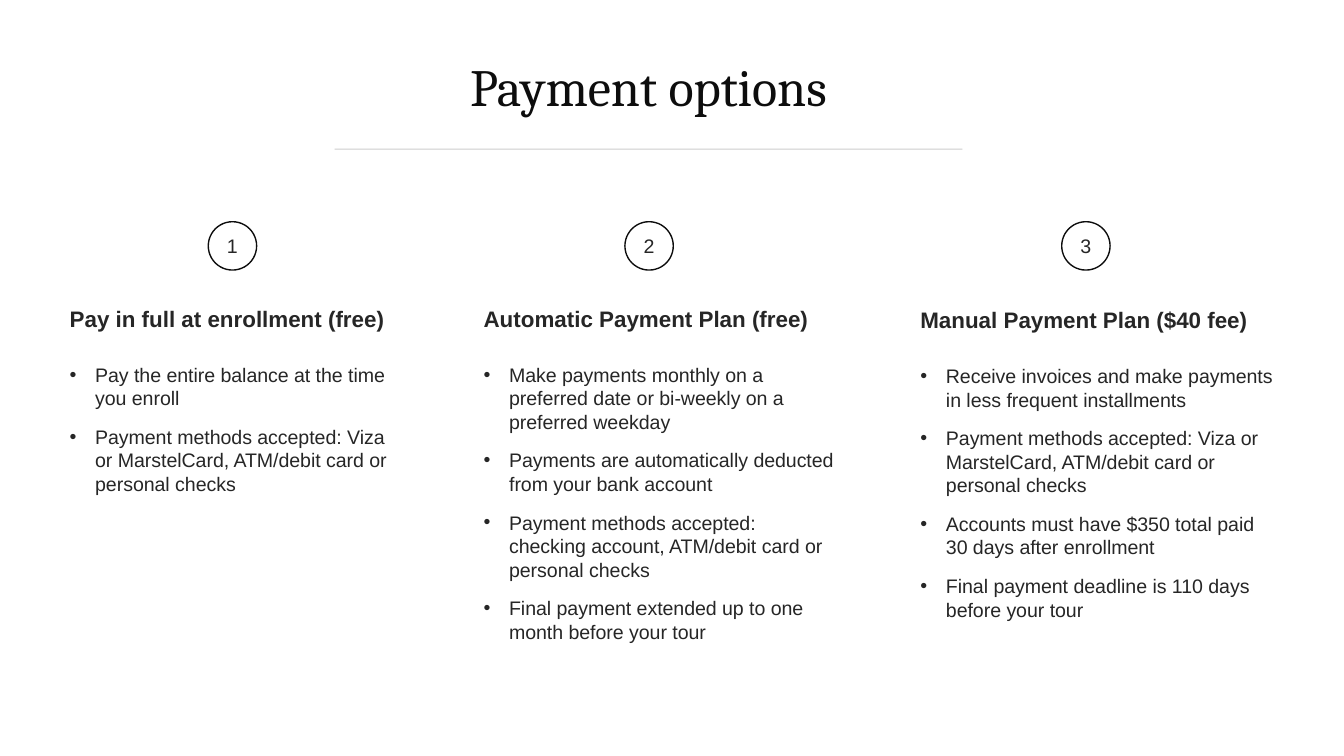
from lxml import etree
from pptx import Presentation
from pptx import util as u
from pptx.dml.color import RGBColor
from pptx.enum import shapes, text
from pptx.oxml.ns import qn

PX = 9144  # 100 px to the inch
INK = RGBColor(0x0D, 0x0D, 0x0D)
BODY = RGBColor(0x26, 0x26, 0x26)
RULE = RGBColor(0x80, 0x80, 0x80)

# left, top, heading width, list width, list height, circle left, heading, items
OPTIONS = [
    (42, 222, 261, 267, 110, 155, "Pay in full at enrollment (free)", [
        "Pay the entire balance at the time you enroll",
        "Payment methods accepted: Viza or MarstelCard, ATM/debit card or personal checks",
    ]),
    (350, 222, 265, 283, 252, 465, "Automatic Payment Plan (free)", [
        "Make payments monthly on a preferred date or bi-weekly on a preferred weekday",
        "Payments are automatically deducted from your bank account",
        "Payment methods accepted: checking account, ATM/debit card or personal checks",
        "Final payment extended up to one month before your tour",
    ]),
    (675, 223, 267, 285, 235, 790, "Manual Payment Plan ($40 fee)", [
        "Receive invoices and make payments in less frequent installments",
        "Payment methods accepted: Viza or MarstelCard, ATM/debit card or personal checks",
        "Accounts must have $350 total paid 30 days after enrollment",
        "Final payment deadline is 110 days before your tour",
    ]),
]


def emu(*lengths):
    return [u.Emu(n * PX) for n in lengths]


def style(p, size, color, name="Arial", bold=False):
    for r in p.runs:
        r.font.size, r.font.name, r.font.bold = u.Pt(size), name, bold
        r.font.color.rgb = color


def add_bullet(p):
    pPr = p._p.get_or_add_pPr()
    pPr.set("marL", str(19 * PX))
    pPr.set("indent", str(-19 * PX))
    etree.SubElement(pPr, qn("a:buFont")).set("typeface", "Arial")
    etree.SubElement(pPr, qn("a:buChar")).set("char", "•")


def add_text(s, box, lines, size, bold=False, bullets=False):
    tf = s.shapes.add_textbox(*emu(*box)).text_frame
    tf.word_wrap = True
    tf.text = "\n".join(lines)
    for i, p in enumerate(tf.paragraphs):
        if bullets:
            add_bullet(p)
        p.space_before = u.Pt(size * 0.2 if i else 0)
        p.space_after = u.Pt(6)
        style(p, size, BODY, bold=bold)


def add_number(s, left, top, number):
    sp = s.shapes.add_shape(shapes.MSO_SHAPE.OVAL, *emu(left, top, 36, 36))
    sp.shadow.inherit = False
    sp.fill.background()
    sp.line.color.rgb = INK
    sp.line.width = u.Pt(0.75)
    tf = sp.text_frame
    tf.margin_left = tf.margin_right = tf.margin_top = tf.margin_bottom = 0
    tf.vertical_anchor = text.MSO_ANCHOR.MIDDLE
    tf.text = str(number)
    p = tf.paragraphs[0]
    p.alignment = text.PP_ALIGN.CENTER
    style(p, 10.5, BODY)


def add_option(s, number, option):
    left, top, head_w, list_w, list_h, circle_left, heading, items = option
    add_number(s, circle_left, 165, number)
    add_text(s, (left, top, head_w, 30), [heading], 12, bold=True)
    add_text(s, (left, top + 43, list_w, list_h), items, 10.5, bullets=True)


def add_title(s, left, top, width, height):
    sp = s.shapes.title
    sp.left, sp.top, sp.width, sp.height = emu(left, top, width, height)
    tf = sp.text_frame
    tf.text = "Payment options"
    tf.auto_size = text.MSO_AUTO_SIZE.NONE
    tf.vertical_anchor = text.MSO_ANCHOR.TOP
    p = tf.paragraphs[0]
    p.alignment = text.PP_ALIGN.CENTER
    style(p, 28, INK, name="Cambria")

    rule_left, rule_y = left + 117, top + 76
    rule = s.shapes.add_connector(
        shapes.MSO_CONNECTOR.STRAIGHT,
        *emu(rule_left, rule_y, rule_left + 467, rule_y))
    rule.line.color.rgb = RULE
    rule.line.width = u.Pt(0.5)
    spPr = rule._element.spPr
    color = next(spPr.iter(qn("a:srgbClr")))
    etree.SubElement(color, qn("a:alpha")).set("val", "40000")
    etree.SubElement(spPr, qn("a:effectLst"))


def main():
    prs = Presentation()
    prs.slide_width = u.Inches(10)
    prs.slide_height = prs.slide_width * 9 // 16
    s = prs.slides.add_slide(prs.slide_layouts[5])
    add_title(s, 132, 35, 701, 65)
    for number, option in enumerate(OPTIONS, 1):
        add_option(s, number, option)
    prs.save("out.pptx")


if __name__ == "__main__":
    main()
